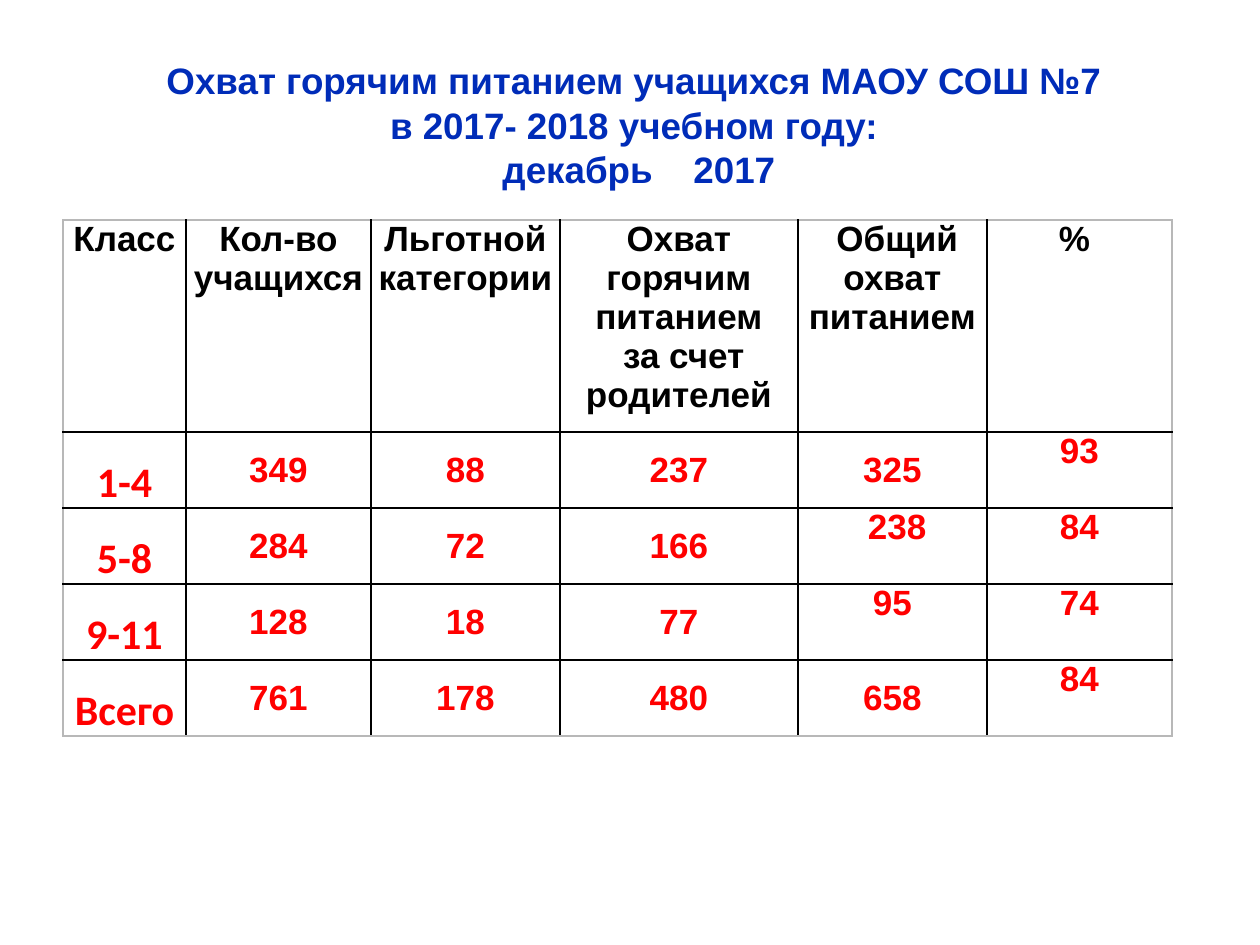
from pptx import Presentation
from pptx.dml.color import RGBColor
from pptx.enum.text import MSO_ANCHOR as Anchor, MSO_AUTO_SIZE as AutoSize, PP_ALIGN as Align
from pptx.oxml import parse_xml
from pptx.oxml.ns import nsdecls
from pptx.util import Emu, Pt

PX = 914400 // 126
BLUE = RGBColor(0x00, 0x2C, 0xB8)
BLACK = RGBColor(0x00, 0x00, 0x00)
RED = RGBColor(0xFF, 0x00, 0x00)
GREY = RGBColor(0xB8, 0xB8, 0xB8)

TITLE = [
    "Охват горячим питанием учащихся МАОУ СОШ №7 ",
    "в 2017- 2018 учебном году: ",
    "декабрь    2017",
]
COLUMNS = [123, 185, 189, 238, 189, 185]
ROWS = [212, 76, 76, 76, 76]
HEADER = [
    "Класс ",
    "Кол-во учащихся",
    "Льготной категории",
    "Охват горячим питанием\n за счет родителей",
    " Общий охват питанием",
    "% ",
]
BODY = [
    ["1-4", "349", "88", "237", "325", "93"],
    ["5-8", "284", "72", "166", " 238", "84"],
    ["9-11", "128", "18", "77", "95", "74"],
    ["Всего", "761", "178", "480", "658", "84"],
]
TOP_TOTALS = {(2, 4), (3, 4)}

HEADER_FONT = {"name": "Arial", "size": Pt(20), "bold": True}
CLASS_FONT = {"name": "Calibri", "size": Pt(24), "bold": True}
TITLE_FONT = {"name": "Arial", "size": Pt(21), "bold": True}


def px(length):
    return Emu(length * PX)


def write(frame, lines, font, color, spacing=None):
    """Fill a text frame with centred paragraphs of one format."""
    frame.word_wrap = True
    for index, line in enumerate(lines):
        para = frame.paragraphs[0] if index == 0 else frame.add_paragraph()
        para.alignment = Align.CENTER
        para.line_spacing = spacing
        span = para.add_run()
        span.text = line
        span.font.color.rgb = color
        for name, value in font.items():
            setattr(span.font, name, value)


def add_title(page):
    box = page.shapes.add_textbox(px(64), px(52), px(1150), px(146))
    write(box.text_frame, TITLE, TITLE_FONT, BLUE)
    box.text_frame.auto_size = AutoSize.SHAPE_TO_FIT_TEXT


def set_borders(cell, edges):
    """Draw one-point lines; edges maps L, R, T and B to colours."""
    properties = cell._tc.get_or_add_tcPr()
    for index, (side, color) in enumerate(edges.items()):
        line = parse_xml(
            f'<a:ln{side} {nsdecls("a")} w="12700"><a:solidFill>'
            f'<a:srgbClr val="{color}"/></a:solidFill></a:ln{side}>'
        )
        properties.insert(index, line)


def format_cell(cell, row, column):
    cell.fill.background()
    side = px(6 if column == 0 else 7)
    margins = {"margin_left": side, "margin_right": side, "margin_top": 0, "margin_bottom": 0}
    for name, value in margins.items():
        setattr(cell, name, value)
    middle = row > 0 and 0 < column < 5 and (row, column) not in TOP_TOTALS
    cell.vertical_anchor = Anchor.MIDDLE if middle else Anchor.TOP
    set_borders(cell, {
        "L": GREY if column == 0 else BLACK,
        "R": GREY if column == len(COLUMNS) - 1 else BLACK,
        "T": GREY if row == 0 else BLACK,
        "B": GREY if row == len(ROWS) - 1 else BLACK,
    })


def add_meals_table(page):
    frame = page.shapes.add_table(
        len(ROWS), len(COLUMNS), px(63), px(220), px(sum(COLUMNS)), px(sum(ROWS))
    )
    table = frame.table
    table.first_row = table.horz_banding = False
    for column, width in zip(table.columns, COLUMNS):
        column.width = px(width)
    for row, height in zip(table.rows, ROWS):
        row.height = px(height)
    for row, texts in enumerate([HEADER] + BODY):
        for column, text in enumerate(texts):
            cell = table.cell(row, column)
            is_class = row > 0 and column == 0
            write(
                cell.text_frame,
                text.split("\n"),
                CLASS_FONT if is_class else HEADER_FONT,
                RED if row else BLACK,
                1.5 if is_class else None,
            )
            format_cell(cell, row, column)


def main():
    deck = Presentation()
    deck.slide_width, deck.slide_height = px(1260), px(945)
    page = deck.slides.add_slide(deck.slide_layouts[6])
    add_title(page)
    add_meals_table(page)
    deck.save("out.pptx")


if __name__ == "__main__":
    main()
